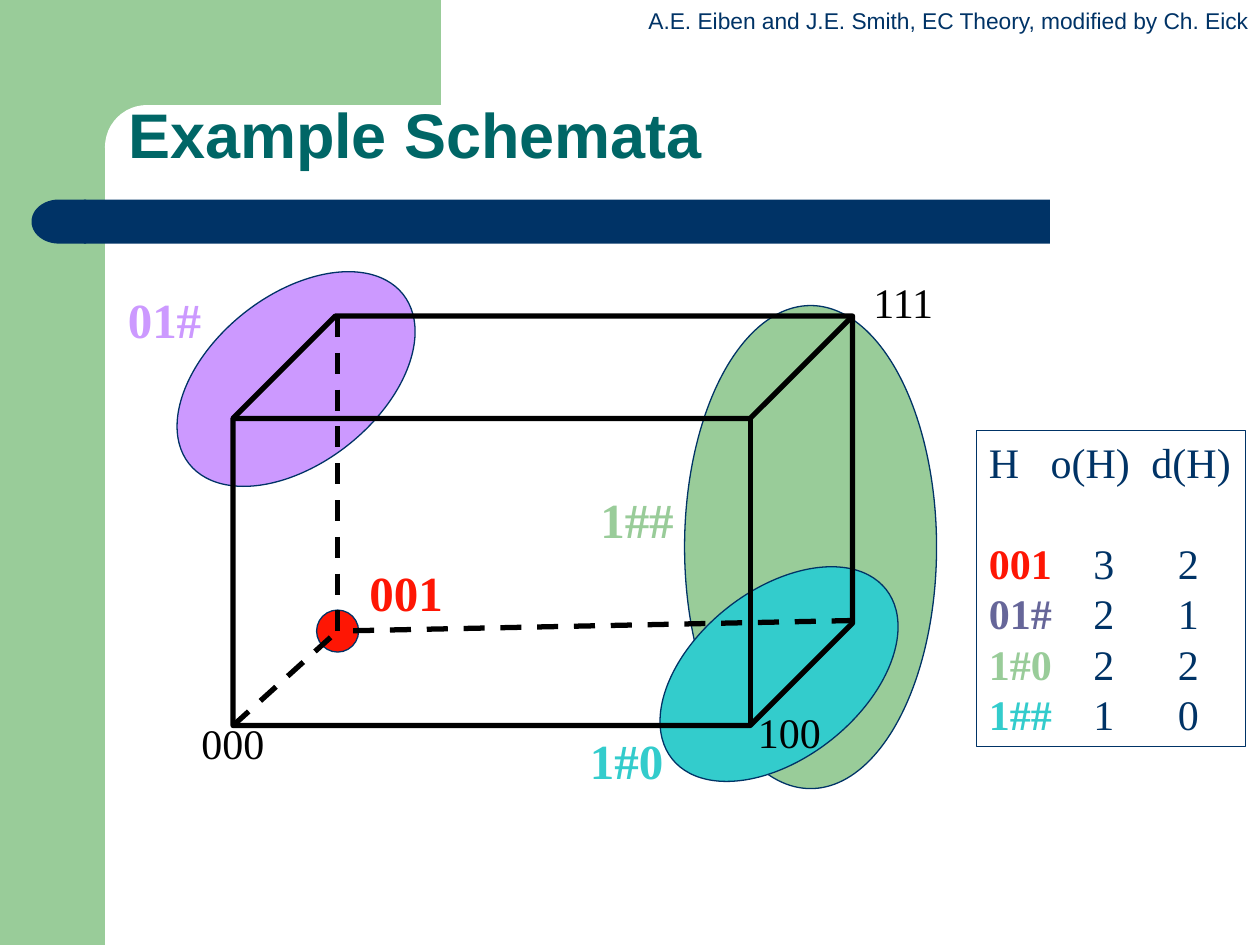
from lxml.etree import SubElement
from pptx import Presentation
from pptx.dml.color import RGBColor
from pptx.enum.dml import MSO_LINE
from pptx.enum.shapes import MSO_CONNECTOR, MSO_SHAPE
from pptx.enum.text import MSO_ANCHOR, MSO_AUTO_SIZE, PP_ALIGN
from pptx.oxml.ns import qn
from pptx.util import Inches, Pt

COLUMNS, ROWS = 120, 90
WIDTH, HEIGHT = Inches(10), Inches(7.5)
SANS, SERIF = "Arial", "Times New Roman"
COLORS = {
    "navy": "003366", "green": "99CC99", "white": "FFFFFF", "teal": "006666",
    "black": "000000", "cyan": "33CCCC", "red": "FE1604", "violet": "CC99FF",
    "slate": "666699",
}
ELLIPSE_TILT = 321.6
LINE_PITCH = Pt(28.8)
HEADER_STOPS = (0.49, 1.29)
VALUE_STOPS = (0.83, 1.5)
SCHEMATA = [
    ("001", "red", 3, 2),
    ("01#", "slate", 2, 1),
    ("1#0", "green", 2, 2),
    ("1##", "cyan", 1, 0),
]


def color(name):
    return RGBColor.from_string(COLORS[name])


def across(columns):
    return round(WIDTH * columns / COLUMNS)


def down(rows):
    return round(HEIGHT * rows / ROWS)


def place(left, top, width, height):
    return across(left), down(top), across(width), down(height)


def style_font(font, name, size, tint, bold=False):
    font.name, font.size, font.bold = name, Pt(size), bold
    font.color.rgb = color(tint)


def add_figure(page, kind, area, fill=None, line=None, weight=0.75, adjust=None, tilt=0):
    figure = page.shapes.add_shape(kind, *place(*area))
    figure.shadow.inherit = False
    figure.rotation = tilt
    if adjust is not None:
        figure.adjustments[0] = adjust
    if fill:
        figure.fill.solid()
        figure.fill.fore_color.rgb = color(fill)
    else:
        figure.fill.background()
    if line:
        figure.line.color.rgb = color(line)
        figure.line.width = Pt(weight)
    else:
        figure.line.fill.background()
    return figure


def add_hidden_edge(page, start, end):
    edge = page.shapes.add_connector(
        MSO_CONNECTOR.STRAIGHT, across(start[0]), down(start[1]), across(end[0]), down(end[1]))
    edge.line.color.rgb = color("black")
    edge.line.width = Pt(3)
    edge.line.dash_style = MSO_LINE.DASH
    SubElement(edge.element.spPr, qn("a:effectLst"))


def add_label(page, text, area, tint, size, name=SERIF, bold=False, align=PP_ALIGN.LEFT):
    box = page.shapes.add_textbox(*place(*area))
    box.text_frame.word_wrap = False
    box.text_frame.auto_size = MSO_AUTO_SIZE.SHAPE_TO_FIT_TEXT
    para = box.text_frame.paragraphs[0]
    para.text, para.alignment = text, align
    style_font(para.font, name, size, tint, bold)


def set_tab_stops(para, stops):
    tabs = SubElement(para._p.get_or_add_pPr(), qn("a:tabLst"))
    for stop in stops:
        SubElement(tabs, qn("a:tab"), pos=str(Inches(stop)), algn="l")


def add_backdrop(page):
    add_figure(page, MSO_SHAPE.RECTANGLE, (0, 0, 10, 90), "green")
    add_figure(page, MSO_SHAPE.RECTANGLE, (9, 0, 33, 14), "green")
    add_figure(page, MSO_SHAPE.ROUNDED_RECTANGLE, (10, 10, 67, 8), "white", adjust=0.5)
    add_figure(page, MSO_SHAPE.RECTANGLE, (8, 19, 92, 4.2), "navy")
    cap = add_figure(page, MSO_SHAPE.FLOWCHART_DELAY, (3, 19, 5.2, 4.2), "navy")
    cap.element.spPr.xfrm.set("flipH", "1")
    add_label(page, "A.E. Eiben and J.E. Smith, EC Theory, modified by Ch. Eick",
              (60.1, 0.1, 59.9, 3.8), "navy", 13, SANS, align=PP_ALIGN.RIGHT)


def format_title(page):
    title = page.shapes.title
    title.element.getparent().append(title.element)
    title.left, title.top, title.width, title.height = place(11, 11, 105, 6)
    frame = title.text_frame
    frame.text = "Example Schemata"
    frame.auto_size = MSO_AUTO_SIZE.NONE
    frame.vertical_anchor = MSO_ANCHOR.BOTTOM
    para = frame.paragraphs[0]
    para.alignment, para.line_spacing = PP_ALIGN.LEFT, 0.9
    style_font(para.font, SANS, 36, "teal", True)


def add_cube_diagram(page):
    left, top, width, height = cube = (22.2, 30.1, 59, 39)
    depth = height / 4
    inner = (left + depth + 0.2, 60.1)

    for area, fill, tilt in [
        ((65.2, 29.1, 24, 46), "green", 0),
        ((61.2, 56.2, 26, 16), "cyan", ELLIPSE_TILT),
        ((inner[0] - 2, inner[1] - 2, 4, 4), "red", 0),
        ((15.2, 28.1, 26, 16), "violet", ELLIPSE_TILT),
    ]:
        add_figure(page, MSO_SHAPE.OVAL, area, fill, "navy", tilt=tilt)

    add_figure(page, MSO_SHAPE.CUBE, cube, line="black", weight=3, adjust=0.25)
    for corner in [(inner[0], top), (left, top + height), (left + width, 59.1)]:
        add_hidden_edge(page, corner, inner)

    for text, column, row in [("111", 82, 25.7), ("000", 18, 67.7), ("100", 71, 66.7)]:
        add_label(page, text, (column, row, 8.4, 6), "black", 24)
    for text, column, row, tint in [
        ("1##", 56, 46, "green"), ("01#", 11, 27, "violet"),
        ("001", 34, 53, "red"), ("1#0", 55, 69, "cyan"),
    ]:
        add_label(page, text, (column, row, 9.4, 6.8), tint, 28, bold=True)


def add_schema_list(page):
    box = page.shapes.add_textbox(*place(93, 41, 25.6, 30.1))
    box.line.color.rgb = color("navy")
    box.line.width = Pt(0.75)
    frame = box.text_frame
    frame.word_wrap = True
    frame.margin_right = 0

    header = frame.paragraphs[0]
    header.text = "H\to(H)\td(H)"
    set_tab_stops(header, HEADER_STOPS)
    header.line_spacing = header.space_after = LINE_PITCH
    style_font(header.font, SERIF, 24, "navy")

    for schema, tint, order, length in SCHEMATA:
        para = frame.add_paragraph()
        set_tab_stops(para, VALUE_STOPS)
        para.line_spacing = LINE_PITCH
        for text, shade, bold in [(schema, tint, True), (f"\t{order}\t{length}", "navy", False)]:
            span = para.add_run()
            span.text = text
            style_font(span.font, SERIF, 24, shade, bold)


def main():
    deck = Presentation()
    deck.slide_width, deck.slide_height = WIDTH, HEIGHT
    page = deck.slides.add_slide(deck.slide_layouts[5])
    add_backdrop(page)
    format_title(page)
    add_cube_diagram(page)
    add_schema_list(page)
    deck.save("out.pptx")


if __name__ == "__main__":
    main()
